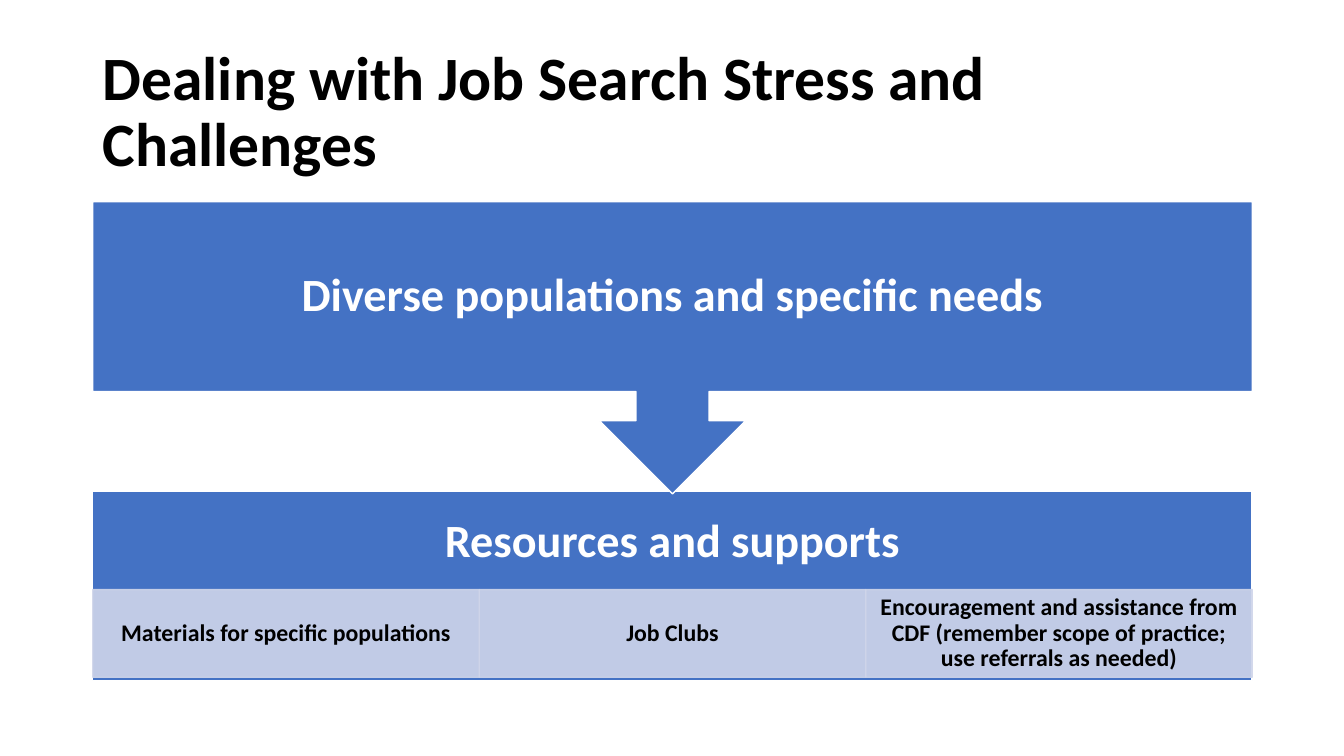
from lxml import etree
from pptx import Presentation
from pptx.dml.color import RGBColor
from pptx.enum.shapes import MSO_SHAPE as SHAPE
from pptx.enum.text import MSO_ANCHOR as ANCHOR, PP_ALIGN as ALIGN
from pptx.oxml.ns import qn
from pptx.util import Inches, Pt

COLORS = {"blue": "4472C4", "pale": "CFD5EA", "white": "FFFFFF", "black": "000000"}
RESOURCES = [
    "Materials for specific populations",
    "Job Clubs",
    "Encouragement and assistance from CDF (remember scope of practice; use referrals as needed)",
]


def rgb(name):
    return RGBColor.from_string(COLORS[name])


def write(sp, text, size, color, align, insets):
    """Set one bold paragraph; insets are left, top, right, bottom."""
    tf = sp.text_frame
    frame = {"word_wrap": True, "vertical_anchor": ANCHOR.MIDDLE}
    for side, inset in zip(("left", "top", "right", "bottom"), insets):
        frame[f"margin_{side}"] = Inches(inset)
    for name, value in frame.items():
        setattr(tf, name, value)
    p = tf.paragraphs[0]
    p.alignment, p.line_spacing = align, 0.9
    r = p.add_run()
    r.text = text
    for name, value in {"name": "Calibri", "size": Pt(size), "bold": True}.items():
        setattr(r.font, name, value)
    r.font.color.rgb = rgb(color)


def add_block(s, kind, box, fill, line, alpha=None):
    sp = s.shapes.add_shape(kind, *map(Inches, box))
    sp.shadow.inherit = False
    sp.fill.solid()
    sp.fill.fore_color.rgb = rgb(fill)
    sp.line.color.rgb = rgb(line)
    sp.line.width = Pt(1)
    if alpha:
        for clr in sp._element.spPr.iter(qn("a:srgbClr")):
            etree.SubElement(clr, qn("a:alpha"), val=str(alpha * 1000))
    return sp


def add_title(s, box):
    sp = s.shapes.add_textbox(*map(Inches, box))
    write(sp, "Dealing with Job Search Stress and Challenges", 44, "black",
          ALIGN.LEFT, (0.1, 0.05, 0.1, 0.05))


def add_resources(s, box):
    x, y, w, h = box
    head_h, cell_y, cell_h = 1.02, y + 0.98, 0.87
    # Heading sits in the upper part of the panel
    panel = add_block(s, SHAPE.RECTANGLE, box, "blue", "white")
    write(panel, "Resources and supports", 33, "white", ALIGN.CENTER,
          (0.26, 0.26, 0.26, h - head_h + 0.26))
    # Equal cells along the foot
    cell_w = w / len(RESOURCES)
    for i, text in enumerate(RESOURCES):
        cell = add_block(s, SHAPE.RECTANGLE, (x + i * cell_w, cell_y, cell_w, cell_h),
                         "pale", "pale", alpha=90)
        write(cell, text, 17, "black", ALIGN.CENTER, (0.13, 0.02, 0.13, 0.02))


def add_needs(s, box):
    sp = add_block(s, SHAPE.DOWN_ARROW_CALLOUT, box, "blue", "white")
    write(sp, "Diverse populations and specific needs", 33, "white", ALIGN.CENTER, (0.26,) * 4)


def main():
    prs = Presentation()
    prs.slide_width, prs.slide_height = Inches(13.33), Inches(7.5)
    s = prs.slides.add_slide(prs.slide_layouts[6])
    left, width = 0.92, 11.5
    add_title(s, (left, 0.4, width, 1.45))
    add_resources(s, (left, 4.87, width, 1.88))
    add_needs(s, (left, 2, width, 2.9))
    prs.save("out.pptx")


if __name__ == "__main__":
    main()
